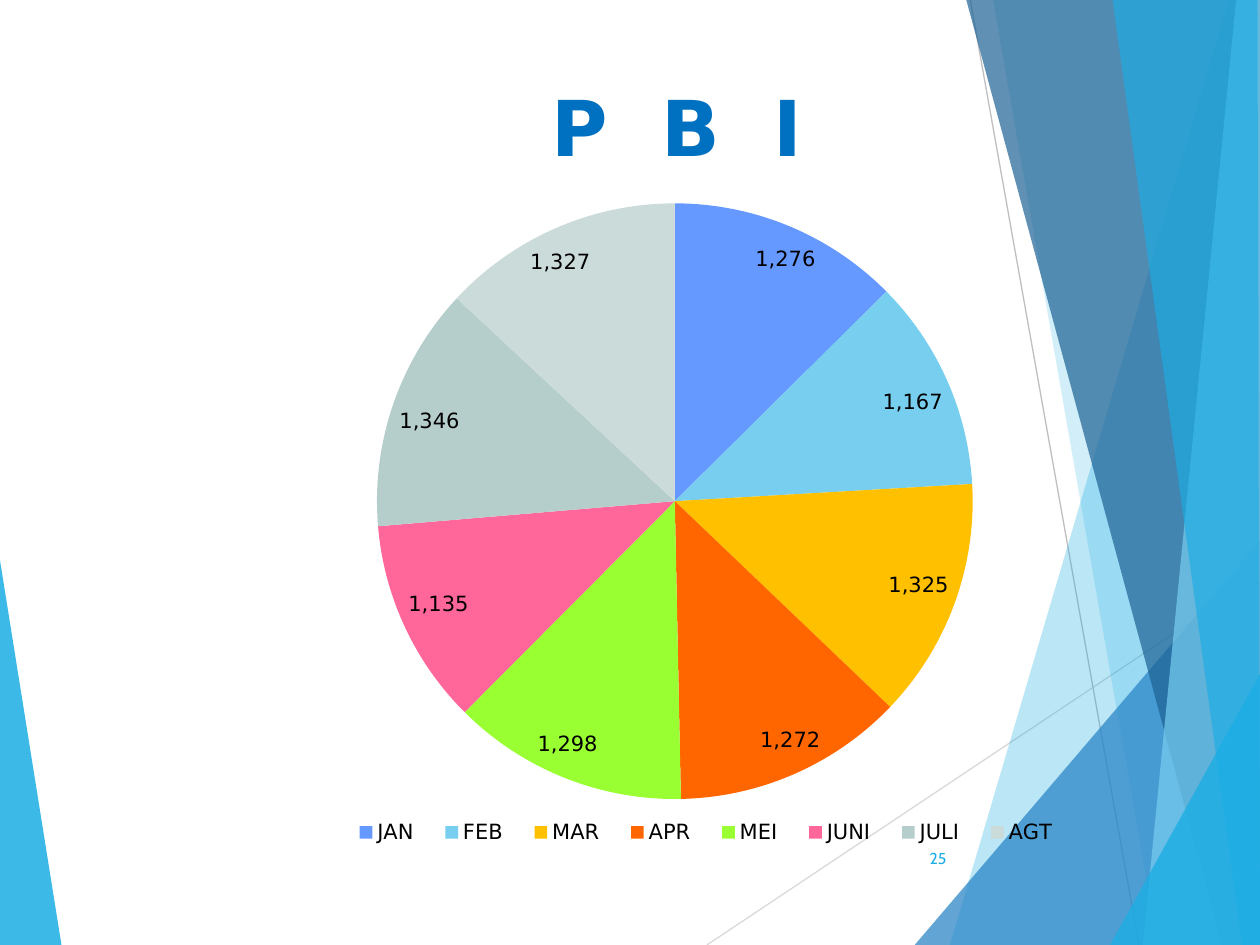
import pptx
import pptx.chart.data
import pptx.dml.color
import pptx.enum.chart
import pptx.enum.shapes
import pptx.enum.text
import pptx.oxml
import pptx.util
from lxml import etree
from pptx.util import Cm, Pt

WIDTH, HEIGHT = 25.4, 19.05
CHART_WIDTH, CHART_HEIGHT = 19, 13.59
SKY = "1CADE4"
LABEL_FONT = "DejaVu Sans"

FACETS_BEHIND = [
    (SKY, 85, [(0, 11.29), (1.24, HEIGHT), (0, HEIGHT)]),
]
FACETS_RIGHT = [
    (SKY, 30, [(24.77, 0), (19.15, HEIGHT), (WIDTH, HEIGHT), (WIDTH, 0)]),
    (SKY, 20, [(20.02, 0), (23.34, HEIGHT), (WIDTH, HEIGHT), (WIDTH, 0)]),
    ("2683C6", 72, [(18.44, HEIGHT), (WIDTH, 10.9), (WIDTH, HEIGHT)]),
    ("1D6294", 70, [(19.48, 0), (24.64, HEIGHT), (WIDTH, HEIGHT), (WIDTH, 0)]),
    ("77CEEF", 70, [(24.92, 0), (23.04, HEIGHT), (WIDTH, HEIGHT), (WIDTH, 0)]),
    (SKY, 65, [(22.43, 0), (25.04, HEIGHT), (WIDTH, HEIGHT), (25.35, 0)]),
    (SKY, 80, [(22.38, HEIGHT), (WIDTH, 13.59), (WIDTH, HEIGHT)]),
]
RAYS = [
    ("D9D9D9", (14.25, HEIGHT), (WIDTH, 11.61)),
    ("BFBFBF", (19.56, 0), (22.96, HEIGHT)),
]
MONTHS = [
    ("JAN", 1276, "6699FF"),
    ("FEB", 1167, "77CEEF"),
    ("MAR", 1325, "FFC000"),
    ("APR", 1272, "FF6600"),
    ("MEI", 1298, "99FF33"),
    ("JUNI", 1135, "FF6699"),
    ("JULI", 1346, "B5CECB"),
    ("AGT", 1327, "CBDBD9"),
]


def color(value):
    return pptx.dml.color.RGBColor.from_string(value)


def style_font(font, size, name, value, bold=False):
    font.size, font.name, font.bold = Pt(size), name, bold
    font.color.rgb = color(value)


def add_facet(slide, fill, opacity, corners):
    points = [(Cm(x), Cm(y)) for x, y in corners]
    builder = slide.shapes.build_freeform(*points[0])
    builder.add_line_segments(points[1:], close=True)
    facet = builder.convert_to_shape()
    facet.shadow.inherit = False
    facet.line.fill.background()
    facet.fill.solid()
    facet.fill.fore_color.rgb = color(fill)
    tint = facet._element.spPr.find(".//" + pptx.oxml.ns.qn("a:srgbClr"))
    etree.SubElement(tint, pptx.oxml.ns.qn("a:alpha"), val=str(opacity * 1000))


def add_ray(slide, stroke, start, end):
    ray = slide.shapes.add_connector(
        pptx.enum.shapes.MSO_CONNECTOR.STRAIGHT, *map(Cm, start + end))
    ray.line.color.rgb = color(stroke)
    ray.line.width = Pt(0.75)
    etree.SubElement(ray._element.spPr, pptx.oxml.ns.qn("a:effectLst"))


def place_part(part, index, target, left, top, width, height):
    qn = pptx.oxml.ns.qn
    for old in part.findall(qn("c:layout")):
        part.remove(old)
    layout = etree.Element(qn("c:layout"))
    manual = etree.SubElement(layout, qn("c:manualLayout"))
    settings = target + [
        ("xMode", "edge"), ("yMode", "edge"),
        ("x", left / CHART_WIDTH), ("y", top / CHART_HEIGHT),
        ("w", width / CHART_WIDTH), ("h", height / CHART_HEIGHT)]
    for tag, value in settings:
        etree.SubElement(manual, qn("c:" + tag), val=str(value))
    part.insert(index, layout)


def add_pie(slide):
    data = pptx.chart.data.CategoryChartData(number_format="#,##0")
    data.categories = [month for month, _, _ in MONTHS]
    data.add_series("Series 1", [amount for _, amount, _ in MONTHS])
    chart = slide.shapes.add_chart(
        pptx.enum.chart.XL_CHART_TYPE.PIE,
        Cm(4.09), Cm(3.76), Cm(CHART_WIDTH), Cm(CHART_HEIGHT), data).chart
    style_font(chart.font, 18, "Cabin", "000000")
    chart.has_title = False
    chart.has_legend = True
    chart.legend.position = pptx.enum.chart.XL_LEGEND_POSITION.BOTTOM
    chart.legend.include_in_layout = False
    style_font(chart.legend.font, 12, LABEL_FONT, "000000")

    pie = chart.plots[0]
    pie.vary_by_categories = True
    for index, (_, _, fill) in enumerate(MONTHS):
        slice_format = pie.series[0].points[index].format
        slice_format.fill.solid()
        slice_format.fill.fore_color.rgb = color(fill)
        slice_format.line.fill.background()

    pie.has_data_labels = True
    labels = pie.data_labels
    labels.show_value = True
    labels.show_percentage = False
    labels.number_format = "#,##0"
    labels.number_format_is_linked = False
    labels.position = pptx.enum.chart.XL_LABEL_POSITION.BEST_FIT
    style_font(labels.font, 12, LABEL_FONT, "000000")
    plot_area = chart._chartSpace.chart.plotArea
    place_part(plot_area, 0, [("layoutTarget", "inner")], 3.51, 0.34, 12.01, 12.01)
    place_part(chart.legend._element, 1, [], 2.66, 12.5, 14.97, 1.04)


def set_text(shape, text, align, size, font, value, bold=False):
    frame = shape.text_frame
    frame.text = text
    frame.word_wrap = True
    frame.vertical_anchor = pptx.enum.text.MSO_ANCHOR.MIDDLE
    paragraph = frame.paragraphs[0]
    paragraph.alignment = align
    style_font(paragraph.runs[0].font, size, font, value, bold)


def add_title(slide):
    title = slide.shapes.title
    title.left, title.top, title.width, title.height = map(
        Cm, (10.19, 1.47, 6.91, 2.13))
    set_text(title, "P  B  I", pptx.enum.text.PP_ALIGN.CENTER,
             44, LABEL_FONT, "0070C0", True)


def add_page_number(slide):
    page_number = slide.shapes.add_textbox(Cm(17.91), Cm(16.79), Cm(1.42), Cm(1.02))
    set_text(page_number, "25", pptx.enum.text.PP_ALIGN.RIGHT, 9, "Cabin", SKY)


def main():
    deck = pptx.Presentation()
    deck.slide_width, deck.slide_height = Cm(WIDTH), Cm(HEIGHT)
    slide = deck.slides.add_slide(deck.slide_layouts[5])
    for facet in FACETS_BEHIND:
        add_facet(slide, *facet)
    for ray in RAYS:
        add_ray(slide, *ray)
    for facet in FACETS_RIGHT:
        add_facet(slide, *facet)
    add_pie(slide)
    add_title(slide)
    add_page_number(slide)
    deck.save("out.pptx")


if __name__ == "__main__":
    main()
